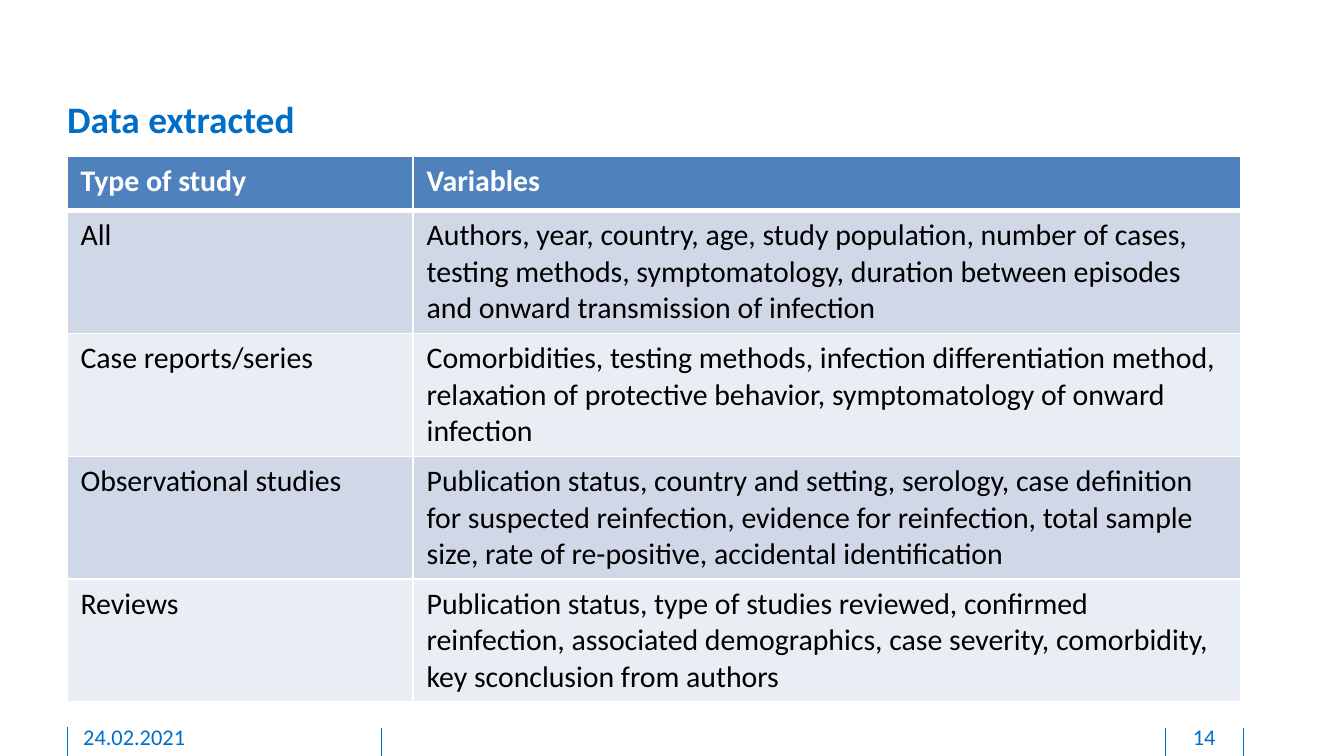
import lxml.etree
import pptx
import pptx.dml.color
import pptx.enum.shapes
import pptx.enum.text
import pptx.oxml
import pptx.oxml.ns
import pptx.util

Pt = pptx.util.Pt
qn = pptx.oxml.ns.qn
hues = {"blue": "006EC7", "head": "4F81BD", "dark": "D0D8E8",
        "pale": "E9EDF4", "white": "FFFFFF", "black": "000000"}
fonts = {
    "title": {"name": "Calibri", "size": Pt(20), "bold": True},
    "foot": {"name": "Calibri", "size": Pt(12), "bold": False},
    "head": {"name": "Calibri", "size": Pt(16), "bold": True},
    "body": {"name": "Calibri", "size": Pt(16), "bold": False},
}


def shade(name):
    return pptx.dml.color.RGBColor.from_string(hues[name])


def write(frame, text, kind, hue):
    para = frame.paragraphs[0]
    run = para.add_run()
    run.text = text
    for key, value in fonts[kind].items():
        setattr(run.font, key, value)
    run.font.color.rgb = shade(hue)
    return para


deck = pptx.Presentation()
deck.slide_width, deck.slide_height = Pt(720), Pt(405)
slide = deck.slides.add_slide(deck.slide_layouts[6])

for x, top in ((624.2, 390.2), (204.5, 390.2), (36, 389.5), (666, 390.2)):
    rule = slide.shapes.add_connector(
        pptx.enum.shapes.MSO_CONNECTOR.STRAIGHT,
        Pt(x), Pt(top), Pt(x), Pt(top + 16))
    rule.line.color.rgb = shade("blue")
    rule.line.width = Pt(0.5)
    lxml.etree.SubElement(rule.element.spPr, qn("a:effectLst"))

align = pptx.enum.text.PP_ALIGN
labels = (
    ("24.02.2021", "foot", (44.6, 387.4, 146.2, 15.1), 3.6, align.LEFT, None),
    ("14", "foot", (625.7, 387.4, 38.9, 15.1), 3.6, align.CENTER, None),
    ("Data extracted", "title", (36, 54, 628.6, 22.3), 0, align.LEFT, Pt(21.5)),
)
for text, kind, area, base, side, pitch in labels:
    frame = slide.shapes.add_textbox(*map(Pt, area)).text_frame
    form = {"margin_left": 0, "margin_top": 0, "margin_right": 0,
            "margin_bottom": Pt(base), "word_wrap": True}
    for key, value in form.items():
        setattr(frame, key, value)
    para = write(frame, text, kind, "blue")
    para.alignment = side
    para.line_spacing = pitch

rows = (
    ("Type of study", "Variables"),
    ("All", "Authors, year, country, age, study population, number of cases, "
     "testing methods, symptomatology, duration between episodes and onward "
     "transmission of infection"),
    ("Case reports/series", "Comorbidities, testing methods, infection "
     "differentiation method, relaxation of protective behavior, "
     "symptomatology of onward infection"),
    ("Observational studies", "Publication status, country and setting, "
     "serology, case definition for suspected reinfection, evidence for "
     "reinfection, total sample size, rate of re-positive, accidental "
     "identification"),
    ("Reviews", "Publication status, type of studies reviewed, confirmed "
     "reinfection, associated demographics, case severity, comorbidity, "
     "key sconclusion from authors"),
)
table = slide.shapes.add_table(
    len(rows), 2, Pt(36), Pt(83.5), Pt(628.6), Pt(292.8)).table
table.horz_banding = False
for col, width in zip(table.columns, (185.4, 443.2)):
    col.width = Pt(width)

for r, row in enumerate(rows):
    table.rows[r].height = Pt(65.9 if r else 29.2)
    kind, hue = ("body", "black") if r else ("head", "white")
    fill = ("pale", "dark")[r % 2] if r else "head"
    edges = {"lnL": 1, "lnR": 1, "lnT": 3 if r == 1 else 1,
             "lnB": 1 if r else 3}
    for c, text in enumerate(row):
        cell = table.cell(r, c)
        write(cell.text_frame, text, kind, hue)
        cell.fill.solid()
        cell.fill.fore_color.rgb = shade(fill)
        props = cell._tc.get_or_add_tcPr()
        for spot, (edge, width) in enumerate(edges.items()):
            line = lxml.etree.Element(qn("a:" + edge), w=str(Pt(width)))
            paint = lxml.etree.SubElement(line, qn("a:solidFill"))
            lxml.etree.SubElement(paint, qn("a:srgbClr"), val=hues["white"])
            props.insert(spot, line)

deck.save("out.pptx")
